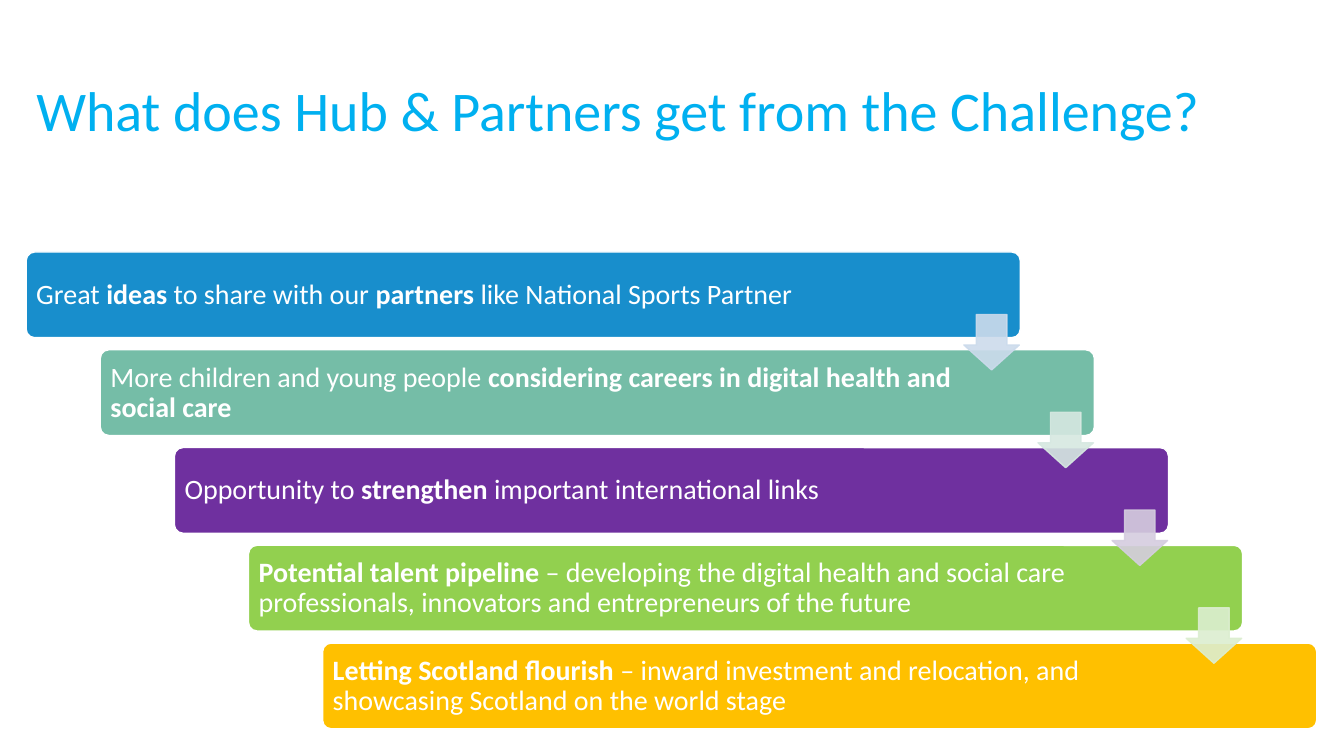
from lxml.etree import SubElement
from pptx import Presentation
from pptx.dml.color import RGBColor
from pptx.enum.shapes import MSO_SHAPE
from pptx.enum.text import MSO_ANCHOR, PP_ALIGN
from pptx.oxml.ns import qn
from pptx.util import Inches, Pt

COLORS = {
    "title": "00B0F0",
    "white": "FFFFFF",
    "blue": "188ECC",
    "teal": "75BDA7",
    "purple": "6F309F",
    "green": "92D04F",
    "gold": "FFC000",
    "pale_blue": "CCDBEC",
    "pale_teal": "D6E8E1",
    "pale_purple": "D5CDDF",
    "pale_green": "DCEED0",
}

BENEFITS = [
    ("blue", 8.84, [("Great ", False), ("ideas", True), (" to share with our ", False),
                    ("partners", True), (" like National Sports Partner", False)]),
    ("teal", 8.52, [("More children and young people ", False),
                    ("considering careers in digital health and social care", True)]),
    ("purple", 8.52, [("Opportunity to ", False), ("strengthen", True),
                      (" important international links", False)]),
    ("green", 8.52, [("Potential talent pipeline ", True),
                     ("– developing the digital health and social care professionals, "
                      "innovators and entrepreneurs of the future", False)]),
    ("gold", 8.52, [("Letting Scotland flourish ", True),
                    ("– inward investment and relocation, and showcasing Scotland "
                     "on the world stage", False)]),
]
ARROWS = ["pale_blue", "pale_teal", "pale_purple", "pale_green"]

STEP_LEFT, STEP_TOP = 0.735, 0.97
BAR_LEFT, BAR_TOP, BAR_WIDTH, BAR_HEIGHT = 0.26, 2.5, 9.86, 0.85
ARROW_LEFT, ARROW_TOP, ARROW_SIZE = 9.56, 3.12, 0.55


def rgb(name):
    return RGBColor.from_string(COLORS[name])


def write_text(box, spans, size, color, inset=None):
    frame = box.text_frame
    frame.word_wrap = True
    frame.vertical_anchor = MSO_ANCHOR.MIDDLE
    if inset is not None:
        frame.margin_left = frame.margin_right = Inches(inset)
        frame.margin_top = frame.margin_bottom = Inches(inset)
    para = frame.paragraphs[0]
    para.alignment = PP_ALIGN.LEFT
    para.line_spacing = 0.9
    for text, bold in spans:
        span = para.add_run()
        span.text = text
        span.font.name = "Calibri"
        span.font.size = Pt(size)
        span.font.bold = bold
        span.font.color.rgb = rgb(color)


def add_title(page, text):
    title = page.shapes.title
    title.left, title.top = Inches(0.26), Inches(0.27)
    title.width, title.height = Inches(12.4), Inches(1.71)
    write_text(title, [(text, False)], size=40, color="title")


def add_block(page, preset, left, top, width, height, fill, line, adjustments):
    block = page.shapes.add_shape(
        preset, Inches(left), Inches(top), Inches(width), Inches(height))
    block.shadow.inherit = False
    block.fill.solid()
    block.fill.fore_color.rgb = rgb(fill)
    block.line.color.rgb = rgb(line)
    block.line.width = Pt(1)
    for index, value in enumerate(adjustments):
        block.adjustments[index] = value
    return block


def add_benefit(page, step, fill, text_width, spans):
    left = BAR_LEFT + step * STEP_LEFT
    top = BAR_TOP + step * STEP_TOP
    add_block(page, MSO_SHAPE.ROUNDED_RECTANGLE, left, top, BAR_WIDTH, BAR_HEIGHT,
              fill, "white", [0.1])
    box = page.shapes.add_textbox(
        Inches(left + 0.02), Inches(top + 0.03), Inches(text_width), Inches(0.8))
    write_text(box, spans, size=20, color="white", inset=0.08)


def add_arrow(page, step, color):
    arrow = add_block(page, MSO_SHAPE.DOWN_ARROW, ARROW_LEFT + step * STEP_LEFT,
                      ARROW_TOP + step * STEP_TOP, ARROW_SIZE, ARROW_SIZE,
                      color, color, [0.55, 0.45])
    for tint in arrow.element.spPr.iter(qn("a:srgbClr")):
        SubElement(tint, qn("a:alpha")).set("val", "90000")


def main():
    deck = Presentation()
    deck.slide_width, deck.slide_height = Inches(13.33), Inches(7.5)
    page = deck.slides.add_slide(deck.slide_layouts.get_by_name("Title Only"))
    add_title(page, "What does Hub & Partners get from the Challenge?")
    for step, (fill, text_width, spans) in enumerate(BENEFITS):
        add_benefit(page, step, fill, text_width, spans)
    for step, color in enumerate(ARROWS):
        add_arrow(page, step, color)
    deck.save("out.pptx")


if __name__ == "__main__":
    main()
